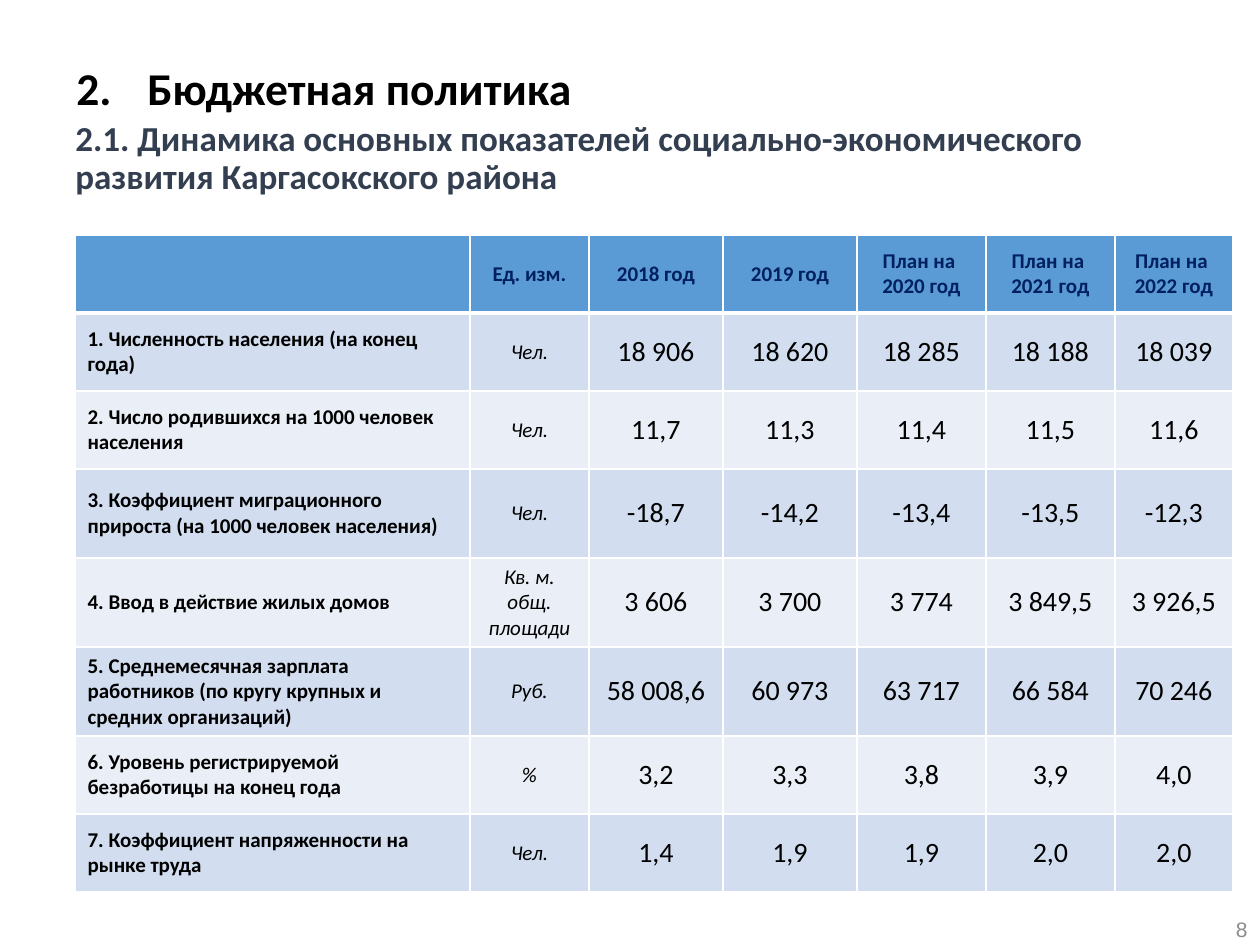
from lxml import etree
from pptx import Presentation
from pptx.dml.color import RGBColor
from pptx.enum.text import MSO_ANCHOR, PP_ALIGN
from pptx.oxml.ns import qn
from pptx.util import Emu, Pt

PX = 914400 / 126
LEFT, CENTER, RIGHT = PP_ALIGN.LEFT, PP_ALIGN.CENTER, PP_ALIGN.RIGHT
TOP, MIDDLE = MSO_ANCHOR.TOP, MSO_ANCHOR.MIDDLE

THEME = {
    "title": {"name": "Calibri", "size": 26, "bold": True, "color": "000000"},
    "subtitle": {"name": "Calibri", "size": 20, "bold": True, "color": "333F50"},
    "header": {"name": "Calibri", "size": 12, "bold": True, "color": "002060"},
    "indicator": {"name": "Calibri", "size": 12, "bold": True, "color": "000000"},
    "unit": {"name": "Calibri", "size": 12, "bold": False, "italic": True, "color": "000000"},
    "value": {"name": "Calibri", "size": 16, "bold": False, "color": "000000"},
    "page_number": {"name": "Arial", "size": 12, "color": "8C8C8C"},
    "header_fill": "5B9BD5",
    "band_fills": ("D2DEEF", "EAEFF7"),
    "border": "FFFFFF",
}

COLUMN_WIDTHS = (395, 119, 134, 134, 129, 129, 118)
ROW_HEIGHTS = (78, 78, 78, 89, 89, 89, 78, 78)
HEADERS = ("", "Ед. изм.", "2018 год", "2019 год",
           "План на \n2020 год", "План на \n2021 год", "План на \n2022 год")
INDICATORS = (
    ("1. Численность населения (на конец года)", "Чел.",
     "18 906", "18 620", "18 285", "18 188", "18 039"),
    ("2. Число родившихся на 1000 человек населения", "Чел.",
     "11,7", "11,3", "11,4", "11,5", "11,6"),
    ("3. Коэффициент миграционного прироста (на 1000 человек населения)", "Чел.",
     "-18,7", "-14,2", "-13,4", "-13,5", "-12,3"),
    ("4. Ввод в действие жилых домов", "Кв. м. общ. площади",
     "3 606", "3 700", "3 774", "3 849,5", "3 926,5"),
    ("5. Среднемесячная зарплата работников (по кругу крупных и средних организаций)", "Руб.",
     "58 008,6", "60 973", "63 717", "66 584", "70 246"),
    ("6. Уровень регистрируемой безработицы на конец года", "%",
     "3,2", "3,3", "3,8", "3,9", "4,0"),
    ("7. Коэффициент напряженности на рынке труда", "Чел.",
     "1,4", "1,9", "1,9", "2,0", "2,0"),
)


def px(length):
    return Emu(round(length * PX))


def rgb(value):
    return RGBColor.from_string(value)


def write_text(frame, text, style, align=LEFT):
    frame.text = text
    for para in frame.paragraphs:
        para.alignment = align
        for span in para.runs:
            for name, value in THEME[style].items():
                if name == "color":
                    span.font.color.rgb = rgb(value)
                else:
                    setattr(span.font, name, Pt(value) if name == "size" else value)


def add_text(page, box, text, style, align=LEFT, anchor=TOP):
    frame = page.shapes.add_textbox(*map(px, box)).text_frame
    frame.word_wrap = True
    frame.vertical_anchor = anchor
    write_text(frame, text, style, align)
    return frame.paragraphs[0]


def number_paragraph(para, start, indent):
    props = para._p.get_or_add_pPr()
    props.set("marL", str(px(indent)))
    props.set("indent", str(-px(indent)))
    bullet = etree.SubElement(props, qn("a:buAutoNum"))
    bullet.set("type", "arabicPeriod")
    bullet.set("startAt", str(start))


def add_heading(page, box):
    left, top, width, height = box
    title = add_text(page, (left + 1, top, width, 130), "Бюджетная политика",
                     "title", anchor=MIDDLE)
    title.line_spacing = 0.9
    number_paragraph(title, start=2, indent=71)
    subtitle = add_text(
        page, (left, top + 89, width, height - 89),
        "2.1. Динамика основных показателей социально-экономического развития Каргасокского района",
        "subtitle")
    subtitle.line_spacing = 0.9


def set_borders(cell, bottom):
    props = cell._tc.get_or_add_tcPr()
    for side, width in {"L": 1, "R": 1, "T": 1, "B": bottom}.items():
        line = etree.SubElement(props, qn(f"a:ln{side}"))
        line.set("w", str(Pt(width)))
        fill = etree.SubElement(line, qn("a:solidFill"))
        etree.SubElement(fill, qn("a:srgbClr")).set("val", THEME["border"])


def fill_cell(cell, text, style, align, color, bottom=1):
    set_borders(cell, bottom)
    cell.fill.solid()
    cell.fill.fore_color.rgb = rgb(color)
    cell.vertical_anchor = MIDDLE
    write_text(cell.text_frame, text, style, align)


def add_indicator_table(page, left, top):
    rows, columns = len(ROW_HEIGHTS), len(COLUMN_WIDTHS)
    box = (left, top, sum(COLUMN_WIDTHS), sum(ROW_HEIGHTS))
    table = page.shapes.add_table(rows, columns, *map(px, box)).table
    for column, width in zip(table.columns, COLUMN_WIDTHS):
        column.width = px(width)
    for row, height in zip(table.rows, ROW_HEIGHTS):
        row.height = px(height)

    for cell, text in zip(table.rows[0].cells, HEADERS):
        fill_cell(cell, text, "header", CENTER, THEME["header_fill"], bottom=3)
    styles = ["indicator", "unit"] + ["value"] * (columns - 2)
    for index, record in enumerate(INDICATORS):
        color = THEME["band_fills"][index % 2]
        for cell, text, style in zip(table.rows[index + 1].cells, record, styles):
            align = LEFT if style == "indicator" else CENTER
            fill_cell(cell, text, style, align, color)


def main():
    deck = Presentation()
    deck.slide_width, deck.slide_height = px(1260), px(945)
    page = deck.slides.add_slide(deck.slide_layouts[6])
    add_heading(page, (63, 26, 1134, 873))
    add_indicator_table(page, 75, 235)
    add_text(page, (966, 896, 294, 66), "8", "page_number", RIGHT, MIDDLE)
    deck.save("out.pptx")


if __name__ == "__main__":
    main()
